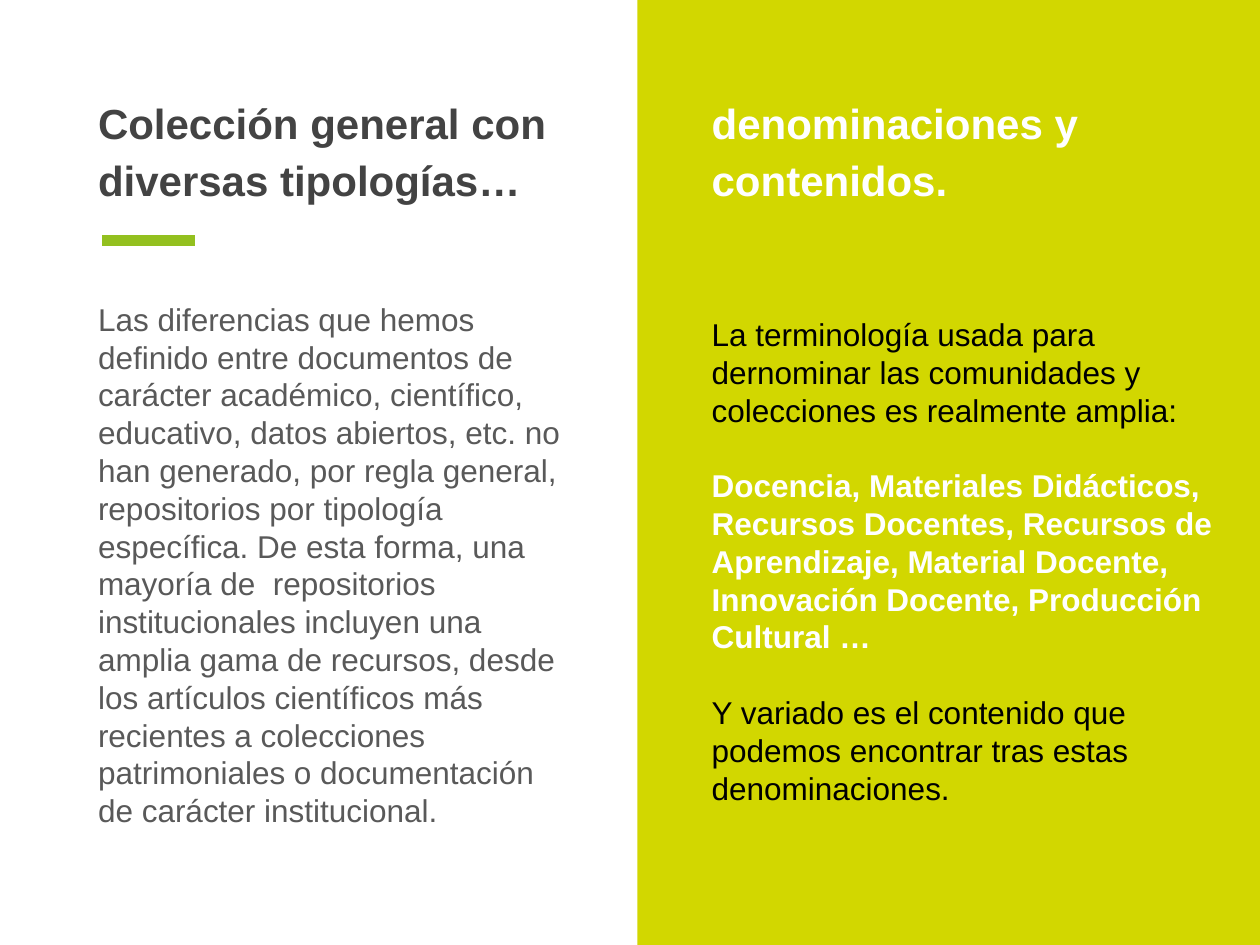
from pptx import Presentation
from pptx.dml.color import RGBColor
from pptx.enum.shapes import MSO_CONNECTOR, MSO_SHAPE
from pptx.enum.text import MSO_ANCHOR
from pptx.oxml.ns import qn
from pptx.util import Inches, Pt
from lxml import etree

RECTANGLE = MSO_SHAPE.RECTANGLE
STRAIGHT = MSO_CONNECTOR.STRAIGHT
TOP, BOTTOM = MSO_ANCHOR.TOP, MSO_ANCHOR.BOTTOM

SLIDE_WIDTH, SLIDE_HEIGHT = 10, 7.5
PANEL_LEFT = 5.06
LEFT_COLUMN, RIGHT_COLUMN = 0.68, 5.55
TITLE_TOP, COLUMN_WIDTH, TITLE_HEIGHT = 0.89, 3.94, 0.84
INSET = 0.1
ACCENT_START, ACCENT_END, ACCENT_Y = 0.81, 1.55, 1.91

PANEL_COLOR, ACCENT_COLOR = "D2D700", "93C01F"
WHITE, BLACK, DARK_GRAY, GRAY = "FFFFFF", "000000", "434343", "595959"

TITLE_FORMAT = {"name": "Arial", "size": Pt(24), "bold": True}
BODY_FORMAT = {"name": "Arial", "size": Pt(18), "bold": False}
STRONG_FORMAT = {**BODY_FORMAT, "bold": True}

TITLE_LAYOUT = {"anchor": BOTTOM, "line_spacing": 1.15}
BODY_LAYOUT = {"anchor": TOP, "space_before": Pt(21.6)}

# Each box: left, top, width, height; layout; paragraphs of (text, format, color)
TEXT_BOXES = [
    ((LEFT_COLUMN, TITLE_TOP, COLUMN_WIDTH, TITLE_HEIGHT), TITLE_LAYOUT, [
        ("Colección general con diversas tipologías…", TITLE_FORMAT, DARK_GRAY),
    ]),
    ((LEFT_COLUMN, 2.28, COLUMN_WIDTH, 3.85), BODY_LAYOUT, [
        ("Las diferencias que hemos definido entre documentos de carácter "
         "académico, científico, educativo, datos abiertos, etc. no han "
         "generado, por regla general, repositorios por tipología específica. "
         "De esta forma, una mayoría de  repositorios institucionales incluyen "
         "una amplia gama de recursos, desde los artículos científicos más "
         "recientes a colecciones patrimoniales o documentación de carácter "
         "institucional.", BODY_FORMAT, GRAY),
    ]),
    ((RIGHT_COLUMN, 2.4, 4.2, 4.63), BODY_LAYOUT, [
        ("La terminología usada para dernominar las comunidades y colecciones "
         "es realmente amplia:", BODY_FORMAT, BLACK),
        ("Docencia, Materiales Didácticos, Recursos Docentes, Recursos de "
         "Aprendizaje, Material Docente, Innovación Docente, Producción "
         "Cultural …", STRONG_FORMAT, WHITE),
        ("Y variado es el contenido que podemos encontrar tras estas "
         "denominaciones.", BODY_FORMAT, BLACK),
    ]),
    ((RIGHT_COLUMN, TITLE_TOP, COLUMN_WIDTH, TITLE_HEIGHT), TITLE_LAYOUT, [
        ("denominaciones y contenidos.", TITLE_FORMAT, WHITE),
    ]),
]


def paint(color_format, color):
    color_format.rgb = RGBColor.from_string(color)


def add_panel(slide):
    panel = slide.shapes.add_shape(
        RECTANGLE, Inches(PANEL_LEFT), 0,
        Inches(SLIDE_WIDTH - PANEL_LEFT), Inches(SLIDE_HEIGHT))
    panel.shadow.inherit = False
    panel.fill.solid()
    paint(panel.fill.fore_color, PANEL_COLOR)
    panel.line.fill.background()


def add_accent(slide):
    accent = slide.shapes.add_connector(
        STRAIGHT, Inches(ACCENT_START), Inches(ACCENT_Y),
        Inches(ACCENT_END), Inches(ACCENT_Y))
    accent.line.width = Pt(6)
    paint(accent.line.color, ACCENT_COLOR)
    etree.SubElement(accent._element.spPr, qn("a:effectLst"))


def add_text(slide, place, layout, paragraphs):
    frame = slide.shapes.add_textbox(*map(Inches, place)).text_frame
    frame.word_wrap = True
    frame.vertical_anchor = layout["anchor"]
    for side in ("left", "top", "right", "bottom"):
        setattr(frame, f"margin_{side}", Inches(INSET))
    for index, (text, font_format, color) in enumerate(paragraphs):
        paragraph = frame.add_paragraph() if index else frame.paragraphs[0]
        paragraph.line_spacing = layout.get("line_spacing")
        if index:
            paragraph.space_before = layout.get("space_before")
        run = paragraph.add_run()
        run.text = text
        for name, value in font_format.items():
            setattr(run.font, name, value)
        paint(run.font.color, color)


def main():
    presentation = Presentation()
    presentation.slide_width = Inches(SLIDE_WIDTH)
    presentation.slide_height = Inches(SLIDE_HEIGHT)
    slide = presentation.slides.add_slide(presentation.slide_layouts[6])
    add_panel(slide)
    add_accent(slide)
    for place, layout, paragraphs in TEXT_BOXES:
        add_text(slide, place, layout, paragraphs)
    presentation.save("out.pptx")


if __name__ == "__main__":
    main()
